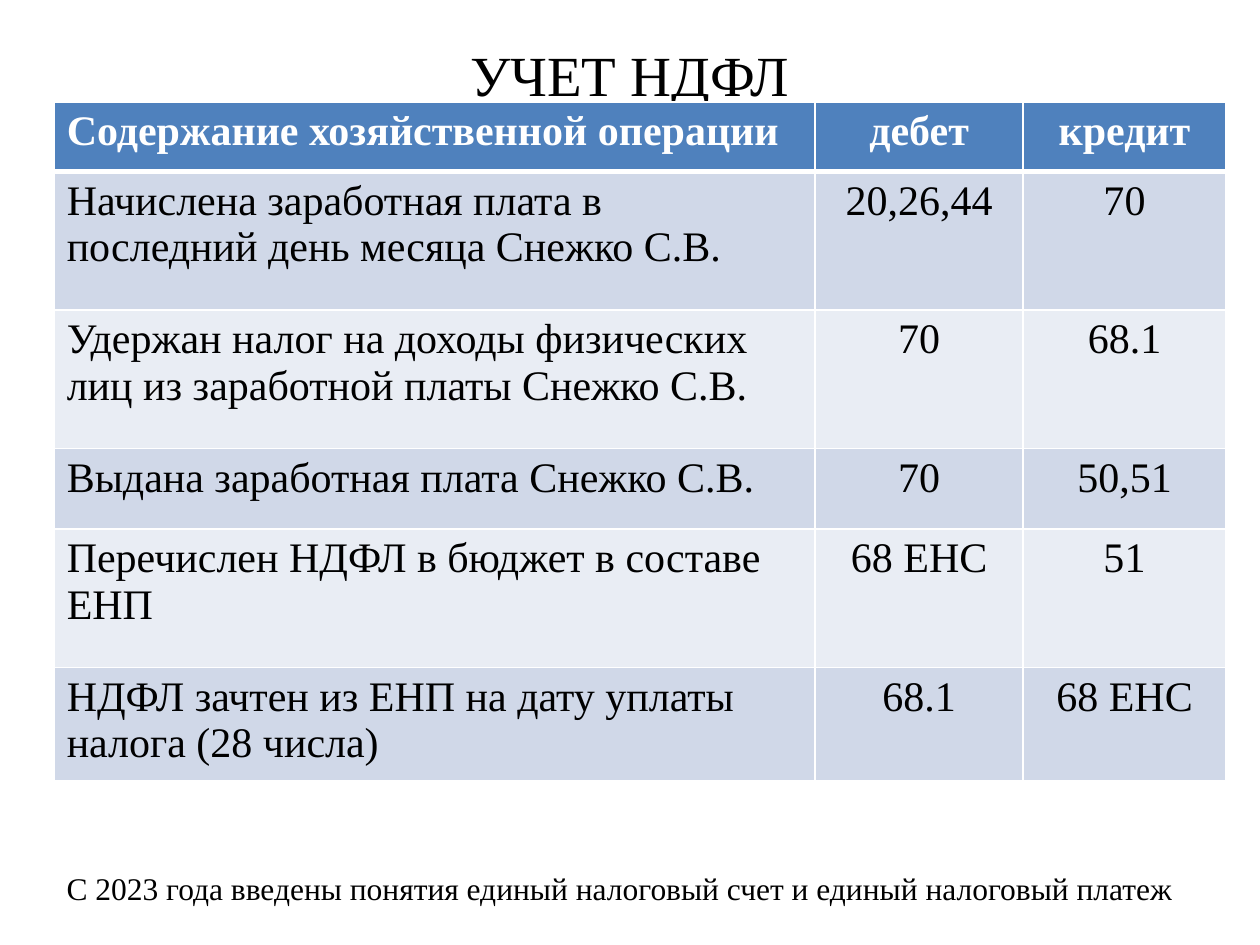
from typing import NamedTuple

from lxml.etree import SubElement
from pptx import Presentation
from pptx.dml.color import RGBColor
from pptx.enum.text import MSO_ANCHOR as Anchor, PP_ALIGN as Align
from pptx.oxml.ns import qn
from pptx.util import Inches, Pt

WHITE = RGBColor(0xFF, 0xFF, 0xFF)
BLACK = RGBColor(0, 0, 0)
HEADER_BLUE = RGBColor(0x4F, 0x81, 0xBD)
BAND_DARK = RGBColor(0xD0, 0xD8, 0xE8)
BAND_LIGHT = RGBColor(0xE9, 0xED, 0xF4)


class Entry(NamedTuple):
    operation: str
    debit: str
    credit: str
    height: float


ENTRIES = [
    Entry("Содержание хозяйственной операции", "дебет", "кредит", 0.55),
    Entry("Начислена заработная плата в последний день месяца Снежко С.В.",
          "20,26,44", "70", 1.1),
    Entry("Удержан налог на доходы физических лиц из заработной платы Снежко С.В.",
          "70", "68.1", 1.1),
    Entry("Выдана заработная плата Снежко С.В.", "70", "50,51", 0.64),
    Entry("Перечислен НДФЛ в бюджет в составе ЕНП", "68 ЕНС", "51", 1.1),
    Entry("НДФЛ зачтен из ЕНП на дату уплаты налога (28 числа)",
          "68.1", "68 ЕНС", 0.71),
]
COLUMN_WIDTHS = [6.04, 1.65, 1.61]


def write(frame, text: str, *, size: float, color=BLACK, bold=False, align=Align.LEFT):
    frame.word_wrap = True
    paragraph = frame.paragraphs[0]
    paragraph.alignment = align
    run = paragraph.add_run()
    run.text = text
    run.font.name = "Times New Roman"
    run.font.size = Pt(size)
    run.font.bold = bold
    run.font.color.rgb = color


def add_text(slide, text: str, left: float, top: float, width: float, height: float,
             **text_format):
    box = slide.shapes.add_textbox(Inches(left), Inches(top), Inches(width), Inches(height))
    write(box.text_frame, text, **text_format)
    return box.text_frame


def set_borders(cell, top: float, bottom: float):
    properties = cell._tc.get_or_add_tcPr()
    for side, width in (("L", 1), ("R", 1), ("T", top), ("B", bottom)):
        line = SubElement(properties, qn(f"a:ln{side}"), w=str(Pt(width)))
        fill = SubElement(line, qn("a:solidFill"))
        SubElement(fill, qn("a:srgbClr"), val=str(WHITE))


def add_entries(slide, entries: list[Entry], left: float, top: float):
    table = slide.shapes.add_table(
        len(entries), len(COLUMN_WIDTHS), Inches(left), Inches(top),
        Inches(sum(COLUMN_WIDTHS)), Inches(sum(entry.height for entry in entries))).table
    for column, width in zip(table.columns, COLUMN_WIDTHS):
        column.width = Inches(width)
    for row_index, entry in enumerate(entries):
        table.rows[row_index].height = Inches(entry.height)
        header = row_index == 0
        band = HEADER_BLUE if header else BAND_DARK if row_index % 2 else BAND_LIGHT
        for column_index, text in enumerate(entry[:3]):
            cell = table.cell(row_index, column_index)
            set_borders(cell, top=3 if row_index == 1 else 1, bottom=3 if header else 1)
            cell.fill.solid()
            cell.fill.fore_color.rgb = band
            write(cell.text_frame, text, size=24, bold=header,
                  color=WHITE if header else BLACK,
                  align=Align.CENTER if column_index else Align.LEFT)


def main():
    deck = Presentation()
    deck.slide_width, deck.slide_height = Inches(10), Inches(7.5)
    slide = deck.slides.add_slide(deck.slide_layouts[6])
    title = add_text(slide, "УЧЕТ НДФЛ", 0.5, 0.3, 9, 0.69, size=32.4, align=Align.CENTER)
    title.vertical_anchor = Anchor.MIDDLE
    title.margin_top, title.margin_bottom = Inches(0), Inches(0.12)
    add_entries(slide, ENTRIES, 0.43, 0.81)
    add_text(slide, "С 2023 года введены понятия единый налоговый счет и единый налоговый платеж",
             0.43, 6.85, 9.37, 0.4, size=18)
    deck.save("out.pptx")


if __name__ == "__main__":
    main()
